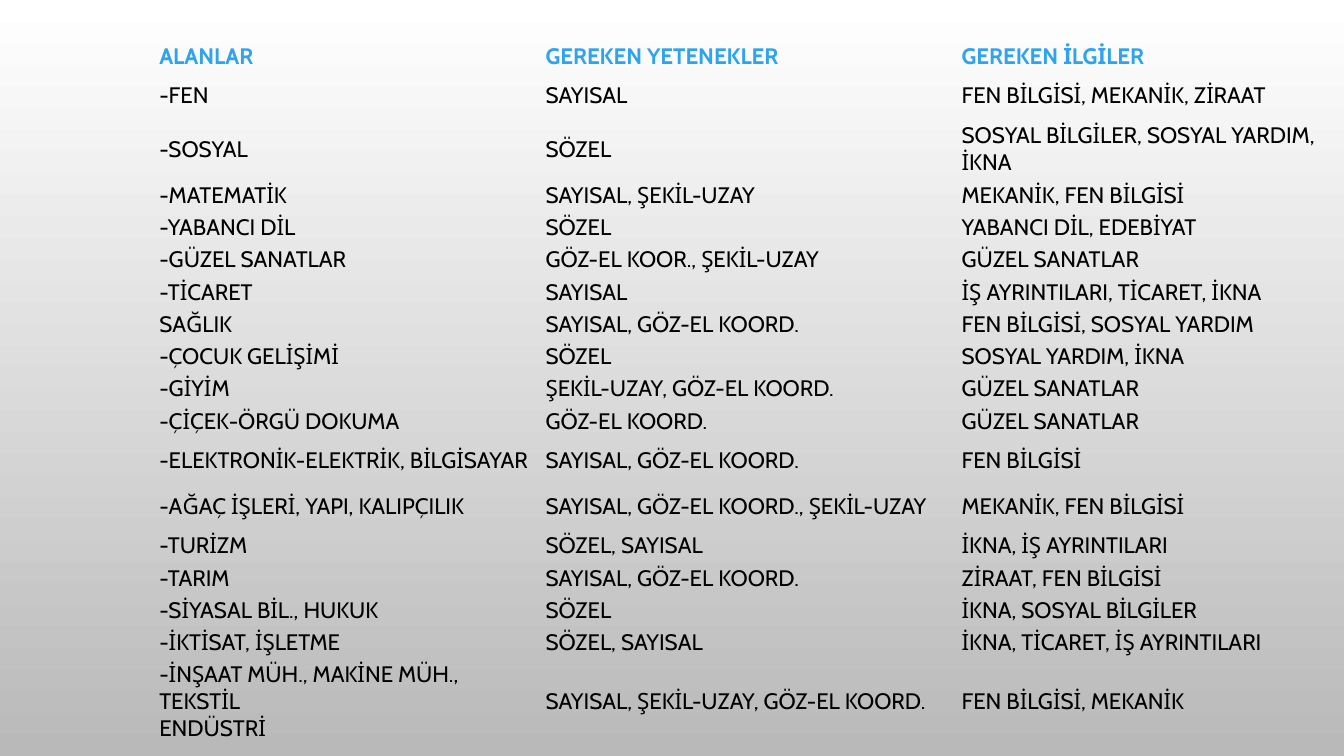
from dataclasses import dataclass

from pptx import Presentation
from pptx import util as u
from pptx.dml.color import RGBColor
from pptx.enum import text


@dataclass(frozen=True)
class Theme:
    font: str = "Cabin"
    size: int = 16
    heading: str = "2FA3EE"
    body: str = "000000"
    page_top: str = "FFFFFF"
    page_bottom: str = "B9B9B9"


THEME = Theme()
NO_GRID_STYLE = "{2D5ABB26-0587-4C30-8999-92F81FD0307C}"
SLIDE_WIDTH, SLIDE_HEIGHT = 13.33, 7.5
TABLE_BOX = (1.55, 0.4, 11.79, 6.74)
COLUMN_SHARES = (0.325, 0.35, 0.325)
SINGLE, MEDIUM, TALL = 0.32, 0.46, 0.6

# Row height, field, required abilities, required interests
ROWS = [
    (SINGLE, "ALANLAR", "GEREKEN YETENEKLER", "GEREKEN İLGİLER"),
    (MEDIUM, "-FEN", "SAYISAL", "FEN BİLGİSİ, MEKANİK, ZİRAAT"),
    (TALL, "-SOSYAL", "SÖZEL", "SOSYAL BİLGİLER, SOSYAL YARDIM, İKNA"),
    (SINGLE, "-MATEMATİK", "SAYISAL, ŞEKİL-UZAY", "MEKANİK, FEN BİLGİSİ"),
    (SINGLE, "-YABANCI DİL", "SÖZEL", "YABANCI DİL, EDEBİYAT"),
    (SINGLE, "-GÜZEL SANATLAR", "GÖZ-EL KOOR., ŞEKİL-UZAY", "GÜZEL SANATLAR"),
    (SINGLE, "-TİCARET", "SAYISAL", "İŞ AYRINTILARI, TİCARET, İKNA"),
    (SINGLE, "SAĞLIK", "SAYISAL, GÖZ-EL KOORD.", "FEN BİLGİSİ, SOSYAL YARDIM"),
    (SINGLE, "-ÇOCUK GELİŞİMİ", "SÖZEL", "SOSYAL YARDIM, İKNA"),
    (SINGLE, "-GİYİM", "ŞEKİL-UZAY, GÖZ-EL KOORD.", "GÜZEL SANATLAR"),
    (SINGLE, "-ÇİÇEK-ÖRGÜ DOKUMA", "GÖZ-EL KOORD.", "GÜZEL SANATLAR"),
    (MEDIUM, "-ELEKTRONİK-ELEKTRİK, BİLGİSAYAR", "SAYISAL, GÖZ-EL KOORD.", "FEN BİLGİSİ"),
    (MEDIUM, "-AĞAÇ İŞLERİ, YAPI, KALIPÇILIK", "SAYISAL, GÖZ-EL KOORD., ŞEKİL-UZAY",
     "MEKANİK, FEN BİLGİSİ"),
    (SINGLE, "-TURİZM", "SÖZEL, SAYISAL", "İKNA, İŞ AYRINTILARI"),
    (SINGLE, "-TARIM", "SAYISAL, GÖZ-EL KOORD.", "ZİRAAT, FEN BİLGİSİ"),
    (SINGLE, "-SİYASAL BİL., HUKUK", "SÖZEL", "İKNA, SOSYAL BİLGİLER"),
    (SINGLE, "-İKTİSAT, İŞLETME", "SÖZEL, SAYISAL", "İKNA, TİCARET, İŞ AYRINTILARI"),
    (TALL, "-İNŞAAT MÜH., MAKİNE MÜH., TEKSTİL\nENDÜSTRİ",
     "SAYISAL, ŞEKİL-UZAY, GÖZ-EL KOORD.", "FEN BİLGİSİ, MEKANİK"),
]


def write_text(frame, wording, color=THEME.body, bold=False):
    """Fill a text frame, one paragraph for each line of the wording."""
    frame.text = wording
    for para in frame.paragraphs:
        for span in para.runs:
            span.font.name = THEME.font
            span.font.size = u.Pt(THEME.size)
            span.font.bold = bold
            span.font.color.rgb = RGBColor.from_string(color)


def paint_background(page):
    fill = page.background.fill
    fill.gradient()
    fill.gradient_angle = 270
    for stop, color in zip(fill.gradient_stops, (THEME.page_top, THEME.page_bottom)):
        stop.color.rgb = RGBColor.from_string(color)


def format_cell(cell):
    cell.fill.background()
    cell.vertical_anchor = text.MSO_ANCHOR.MIDDLE
    cell.margin_left = cell.margin_right = u.Inches(0.03)
    cell.margin_top = cell.margin_bottom = u.Inches(0.02)


def add_fields_table(page, box):
    left, top, width, height = map(u.Inches, box)
    table = page.shapes.add_table(
        len(ROWS), len(COLUMN_SHARES), left, top, width, height).table
    table.first_row = table.horz_banding = False
    table._tbl.tblPr[0].text = NO_GRID_STYLE
    for column, share in zip(table.columns, COLUMN_SHARES):
        column.width = int(width * share)
    for index, (row_height, *wordings) in enumerate(ROWS):
        table.rows[index].height = u.Inches(row_height)
        is_heading = index == 0
        color = THEME.heading if is_heading else THEME.body
        for cell, wording in zip(table.rows[index].cells, wordings):
            format_cell(cell)
            write_text(cell.text_frame, wording, color=color, bold=is_heading)


def main():
    deck = Presentation()
    deck.slide_width, deck.slide_height = u.Inches(SLIDE_WIDTH), u.Inches(SLIDE_HEIGHT)
    page = deck.slides.add_slide(deck.slide_layouts[6])
    paint_background(page)
    add_fields_table(page, TABLE_BOX)
    deck.save("out.pptx")


if __name__ == "__main__":
    main()
